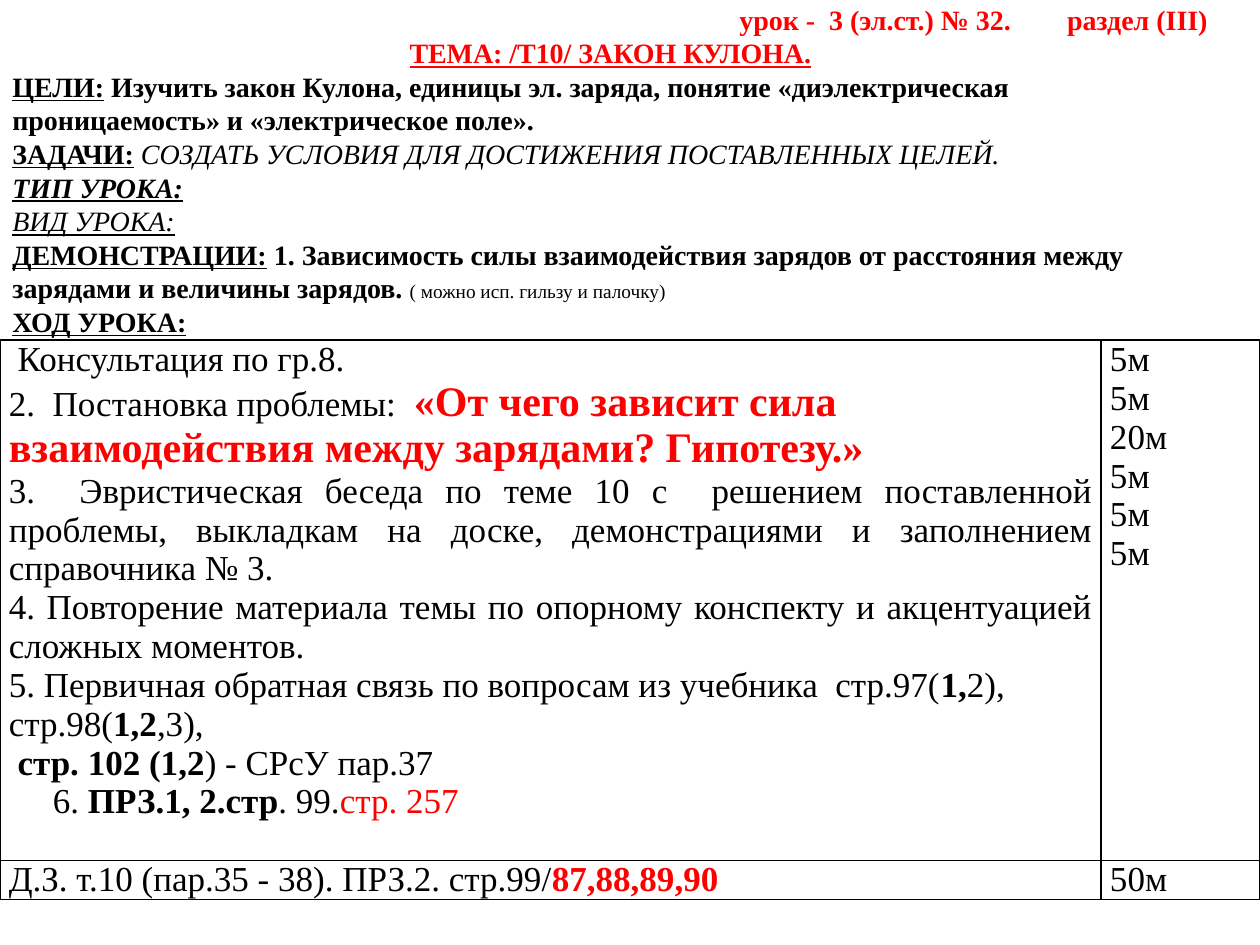
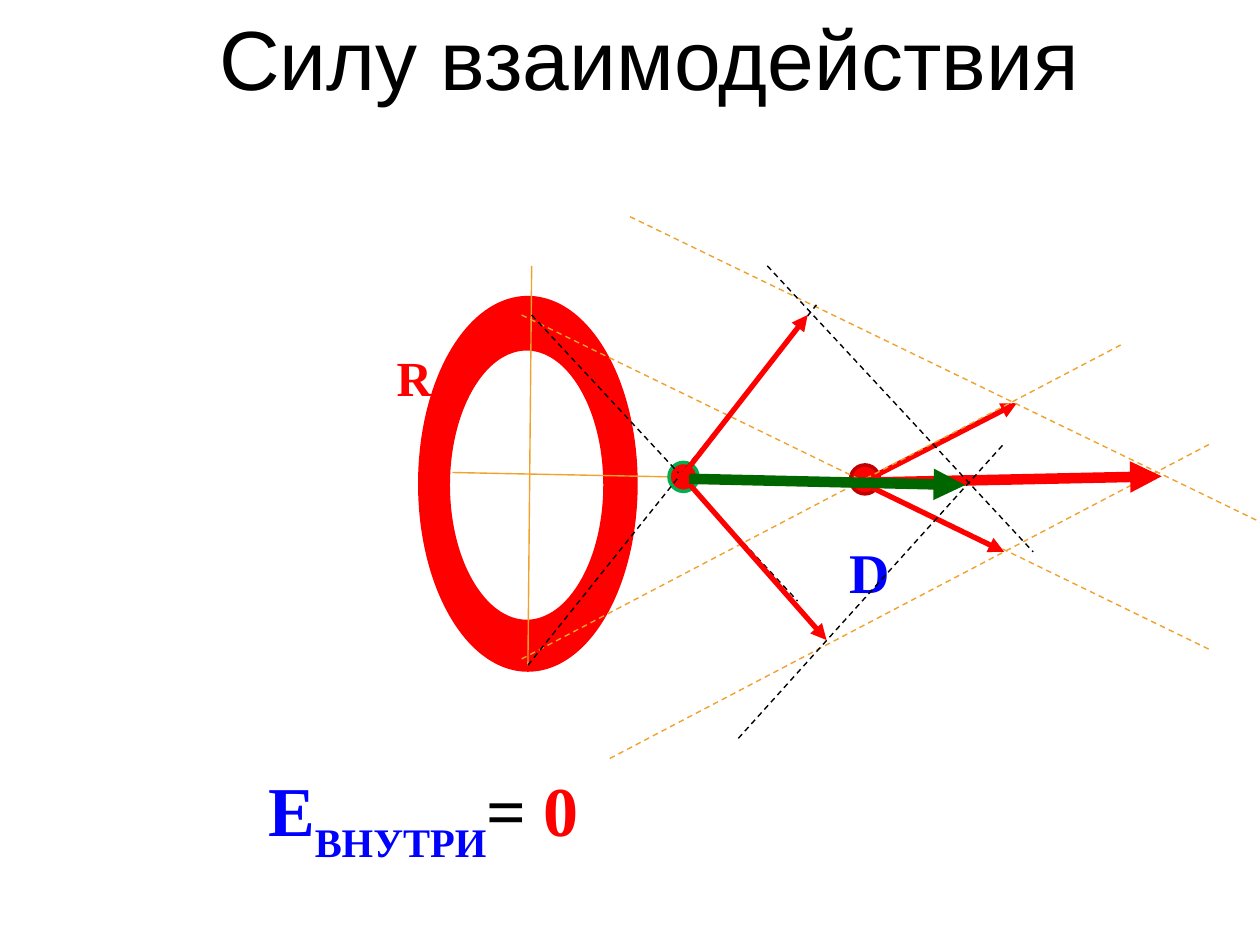
from dataclasses import dataclass

from lxml.etree import SubElement
from pptx import Presentation
from pptx.dml.color import RGBColor as RGB
from pptx.enum.dml import MSO_LINE as Dash
from pptx.enum.shapes import MSO_CONNECTOR as Link, MSO_SHAPE as Geo
from pptx.enum.text import MSO_ANCHOR as Anchor, PP_ALIGN as Align
from pptx.oxml import parse_xml
from pptx.oxml.ns import nsdecls, qn
from pptx.util import Inches, Pt


@dataclass(frozen=True)
class Theme:
    serif: str = "Times New Roman"
    sans: str = "Arial"
    black: str = "000000"
    white: str = "FFFFFF"
    red: str = "FF0000"
    dark: str = "C00000"
    blue: str = "0000FF"
    amber: str = "F0A22E"
    green: str = "006600"
    lime: str = "00B050"
    note: int = 11
    head: int = 16
    body: int = 20
    ask: int = 24
    radius: int = 28
    mark: int = 32
    formula: int = 40
    title: int = 48
    thin: float = 0.79


T = Theme()

# Format values that a run picks by name
LOOK = {
    "b": {"bold": True},
    "i": {"italic": True},
    "u": {"underline": True},
    "red": {"color": T.red},
    "blue": {"color": T.blue},
    "note": {"size": T.note},
    "ask": {"size": T.ask},
    "sans": {"name": T.sans},
    "sub": {"base": -30000},
}

# Paragraph: (format, [(text, looks), ...])
LEFT, MID, JUST = {}, {"align": Align.CENTER}, {"align": Align.JUSTIFY}
HEADER = [
    ({"tabs": (5.77, 8.37)}, [("\tурок -  3 (эл.ст.) № 32.\tраздел (III)", "b red")]),
    (MID, [("ТЕМА: /Т10/ ЗАКОН КУЛОНА.", "b u red")]),
    (LEFT, [("ЦЕЛИ:", "b u"),
            (" Изучить закон Кулона, единицы эл. заряда, понятие "
             "«диэлектрическая проницаемость» и «электрическое поле».", "b")]),
    (LEFT, [("ЗАДАЧИ:", "b u"),
            (" СОЗДАТЬ УСЛОВИЯ ДЛЯ ДОСТИЖЕНИЯ ПОСТАВЛЕННЫХ ЦЕЛЕЙ.", "i")]),
    (LEFT, [("ТИП УРОКА:", "b i u")]),
    (LEFT, [("ВИД УРОКА:", "i u")]),
    (LEFT, [("ДЕМОНСТРАЦИИ:", "b u"),
            (" 1. Зависимость силы взаимодействия зарядов от расстояния "
             "между зарядами и величины зарядов. ", "b"),
            ("( можно исп. гильзу и палочку)", "note")]),
    (LEFT, [("ХОД УРОКА:", "b u")]),
]
STEPS = [
    ({"indent": 0.07}, [("Консультация по гр.8.", "")]),
    (LEFT, [("2.  Постановка проблемы:  ", ""),
            ("«От чего зависит сила взаимодействия между зарядами? Гипотезу.»",
             "b red ask")]),
    (JUST, [("3.  Эвристическая беседа по теме 10 с  решением поставленной проблемы, "
             "выкладкам на доске, демонстрациями и заполнением справочника № 3.", "")]),
    (JUST, [("4. Повторение материала темы по опорному конспекту и акцентуацией "
             "сложных моментов.", "")]),
    (LEFT, [("5. Первичная обратная связь по вопросам из учебника  стр.97(", ""),
            ("1,", "b"), ("2), стр.98(", ""), ("1,2", "b"), (",3),", "")]),
    ({"indent": 0.07}, [("стр. 102 (1,2", "b"), (") - СРсУ пар.37", "")]),
    ({"indent": 0.35}, [("6. ", ""), ("ПРЗ.1, 2.стр", "b"), (". 99.", ""),
                        ("стр. 257", "red")]),
]
TIMES = [(LEFT, [(time, "")]) for time in ("5м", "5м", "20м", "5м", "5м", "5м")]
TASK = [(LEFT, [("Д.З. т.10 (пар.35 - 38). ПРЗ.2. стр.99/", ""),
                ("87,88,89,90", "b red")])]
TOTAL = [(LEFT, [("50м", "")])]
PLAN = [[STEPS, TIMES], [TASK, TOTAL]]
COLS, ROWS = (8.74, 1.26), (4.13, 0.31)
TOP = 2.7  # the header ends where the table starts

FORMULA = [(LEFT, [("E", "b blue"), ("ВНУТРИ", "b blue sub"), ("= ", "b"),
                   ("0", "b red")])]
TITLE = [(LEFT, [("Силу взаимодействия", "sans")])]

# Line kinds: colour, width, dashed, arrow
LINES = {
    "axis": (T.amber, T.thin, False, False),
    "far": (T.amber, T.thin, True, False),
    "near": (T.black, T.thin, True, False),
    "force": (T.red, 3, False, True),
    "sum": (T.red, 6, False, True),
    "field": (T.green, 6, False, True),
}

# Ovals: left, top, width, height, fill, line, line width
RING = [
    (3.36, 2.39, 1.66, 2.9, T.red, T.red, 6),
    (3.53, 2.74, 1.3, 2.22, T.white, T.red, 6),
]
SIZE = 0.23
AXES = [("axis", 3.59, 3.75, 7.58, 3.83), ("axis", 4.22, 2.11, 4.19, 5.28)]
# Each charge with the lines that lie over it, from back to front
CHARGES = [
    ((6.75, 3.69, SIZE, SIZE, T.red, T.dark, 2), [
        ("force", 6.88, 3.81, 8.07, 3.2),
        ("far", 4.14, 5.23, 8.91, 2.73),
        ("far", 4.14, 2.5, 9.61, 5.16),
        ("force", 6.88, 3.85, 7.97, 4.38),
        ("far", 5, 1.72, 10.47, 4.37),
        ("far", 4.84, 6.02, 9.61, 3.52),
        ("sum", 6.88, 3.83, 9.22, 3.78),
    ]),
    ((5.31, 3.67, SIZE, SIZE, T.red, T.lime, 2), [
        ("near", 4.22, 2.5, 6.33, 4.77),
        ("near", 4.19, 5.28, 6.48, 2.42),
        ("force", 5.39, 3.81, 6.41, 2.5),
        ("force", 5.39, 3.75, 6.56, 5.08),
        ("near", 5.86, 5.86, 7.97, 3.52),
        ("near", 6.09, 2.11, 8.2, 4.38),
        ("field", 5.47, 3.8, 7.66, 3.85),
    ]),
]


def inch(*vals):
    return [Inches(val) for val in vals]


def style(run, size, looks):
    vals = {"name": T.serif, "size": size, "color": T.black,
            "bold": False, "italic": False, "underline": False}
    for look in looks.split():
        vals.update(LOOK[look])
    run.font.color.rgb = RGB.from_string(vals.pop("color"))
    base = vals.pop("base", None)
    if base:
        run.font._element.set("baseline", str(base))
    vals["size"] = Pt(vals["size"])
    for key, val in vals.items():
        setattr(run.font, key, val)


def write(frame, paras, size):
    """Fill a text frame with paragraphs of styled runs."""
    for num, (form, runs) in enumerate(paras):
        para = frame.add_paragraph() if num else frame.paragraphs[0]
        para.alignment = form.get("align", Align.LEFT)
        props = para._p.get_or_add_pPr()
        if "indent" in form:
            props.set("marL", str(Inches(form["indent"])))
            props.set("indent", "0")
        if "tabs" in form:
            stops = SubElement(props, qn("a:tabLst"))
            for pos in form["tabs"]:
                SubElement(stops, qn("a:tab"), pos=str(Inches(pos)), algn="l")
        for text, looks in runs:
            run = para.add_run()
            run.text = text
            style(run, size, looks)


def label(slide, box, paras, size, wrap=True, anchor=Anchor.TOP):
    frame = slide.shapes.add_textbox(*inch(*box)).text_frame
    frame.word_wrap = wrap
    frame.vertical_anchor = anchor
    write(frame, paras, size)


def edge(cell):
    """Draw a thin black border on all four sides."""
    props = cell._tc.get_or_add_tcPr()
    for num, side in enumerate("LRTB"):
        props.insert(num, parse_xml(
            f'<a:ln{side} {nsdecls("a")} w="12700"><a:solidFill>'
            f'<a:srgbClr val="{T.black}"/></a:solidFill></a:ln{side}>'))


def grid(slide):
    table = slide.shapes.add_table(
        len(ROWS), len(COLS), *inch(0, TOP, sum(COLS), sum(ROWS))).table
    table.first_row = table.horz_banding = False
    for col, width in zip(table.columns, COLS):
        col.width = Inches(width)
    for row, height, texts in zip(table.rows, ROWS, PLAN):
        row.height = Inches(height)
        for cell, paras in zip(row.cells, texts):
            cell.margin_left = cell.margin_right = Inches(0.07)
            cell.margin_top = cell.margin_bottom = 0
            cell.fill.background()
            edge(cell)
            write(cell.text_frame, paras, T.body)


def oval(slide, left, top, width, height, fill, color, weight):
    shape = slide.shapes.add_shape(Geo.OVAL, *inch(left, top, width, height))
    shape.shadow.inherit = False
    shape.fill.solid()
    shape.fill.fore_color.rgb = RGB.from_string(fill)
    shape.line.color.rgb = RGB.from_string(color)
    shape.line.width = Pt(weight)


def draw(slide, kind, *ends):
    color, weight, dashed, arrow = LINES[kind]
    link = slide.shapes.add_connector(Link.STRAIGHT, *inch(*ends))
    link.line.color.rgb = RGB.from_string(color)
    link.line.width = Pt(weight)
    if dashed:
        link.line.dash_style = Dash.DASH
    if arrow:
        SubElement(link.line._get_or_add_ln(), qn("a:tailEnd"), type="triangle")
    SubElement(link._element.spPr, qn("a:effectLst"))


def lesson(slide):
    grid(slide)
    label(slide, (0, 0, 9.69, TOP), HEADER, T.head, anchor=Anchor.MIDDLE)


def forces(slide):
    label(slide, (2.03, 6.09, 3.2, 0.77), FORMULA, T.formula, anchor=Anchor.MIDDLE)
    label(slide, (1.64, 0, 7.1, 0.91), TITLE, T.title, wrap=False)
    for ring in RING:
        oval(slide, *ring)
    label(slide, (6.64, 4.22, 0.49, 0.64), [(LEFT, [("D", "b blue")])], T.mark)
    label(slide, (3.05, 2.71, 0.49, 0.57), [(LEFT, [("R", "b red")])], T.radius,
          wrap=False)
    for axis in AXES:
        draw(slide, *axis)
    for charge, lines in CHARGES:
        oval(slide, *charge)
        for line in lines:
            draw(slide, *line)


def main():
    deck = Presentation()
    deck.slide_width, deck.slide_height = inch(10, 7.5)
    for build in (lesson, forces):
        build(deck.slides.add_slide(deck.slide_layouts[6]))
    deck.save("out.pptx")


if __name__ == "__main__":
    main()
